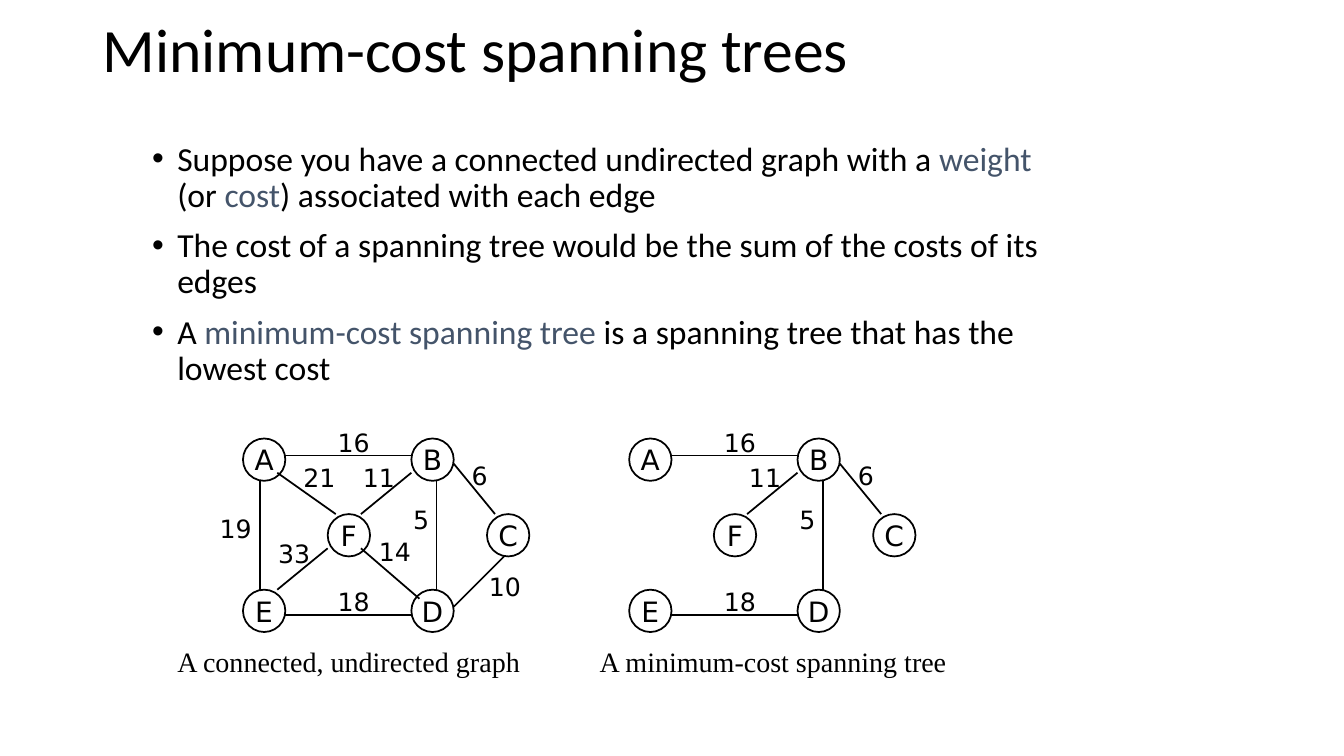
from lxml import etree
from pptx import Presentation
from pptx import util as u
from pptx.dml.color import RGBColor
from pptx.enum import shapes, text
from pptx.oxml.ns import qn

COLORS = {"ink": "000000", "term": "44546A"}

prs = Presentation()
prs.slide_width, prs.slide_height = u.Inches(13.33), u.Inches(7.5)
s = prs.slides.add_slide(prs.slide_layouts[6])


def add_run(p, words, font, size, color="ink"):
    r = p.add_run()
    r.text = words
    for name, value in {"name": font, "size": u.Pt(size)}.items():
        setattr(r.font, name, value)
    r.font.color.rgb = RGBColor.from_string(COLORS[color])


def add_box(parent, left, top, width, height, **frame):
    box = parent.shapes.add_textbox(*map(u.Inches, (left, top, width, height)))
    for name, value in {"word_wrap": True, **frame}.items():
        setattr(box.text_frame, name, value)
    return box.text_frame


# Title
tf = add_box(s, 0.92, 0.05, 11.5, 0.95, vertical_anchor=text.MSO_ANCHOR.MIDDLE)
tf.paragraphs[0].line_spacing = 0.9
add_run(tf.paragraphs[0], "Minimum-cost spanning trees", "Calibri", 44)

# Bulleted definitions
definitions = [
    [("Suppose you have a connected undirected graph with a ", "ink"),
     ("weight", "term"), (" (or ", "ink"), ("cost", "term"),
     (") associated with each edge", "ink")],
    [("The cost of a spanning tree would be the sum of the costs of its edges", "ink")],
    [("A ", "ink"), ("minimum-cost spanning tree", "term"),
     (" is a spanning tree that has the lowest cost", "ink")],
]
tf = add_box(s, 1.41, 1.36, 9.38, 2.73)
for i, runs in enumerate(definitions):
    p = tf.add_paragraph() if i else tf.paragraphs[0]
    pPr = p._p.get_or_add_pPr()
    pPr.set("marL", str(u.Inches(0.25)))
    pPr.set("indent", str(u.Inches(-0.25)))
    etree.SubElement(pPr, qn("a:buFont")).set("typeface", "Arial")
    etree.SubElement(pPr, qn("a:buChar")).set("char", "•")
    p.line_spacing = 0.9
    p.space_before = u.Pt(10 if i else 0)
    for words, color in runs:
        add_run(p, words, "Calibri", 24, color)

# Graph: node corners, then edges as line ends, weight and weight position
NODE = 0.42
nodes = {"A": (2.41, 4.35), "B": (4.08, 4.35), "E": (2.41, 5.85),
         "D": (4.08, 5.85), "F": (3.25, 5.1), "C": (4.83, 5.1)}
edges = {
    "AB": ((2.83, 4.52), (4.08, 4.52), "16", (3.25, 4.19)),
    "AE": ((2.58, 4.77), (2.58, 5.85), "19", (2.08, 5.04)),
    "BD": ((4.33, 4.77), (4.33, 5.85), "5", (4, 4.95)),
    "ED": ((2.83, 6.1), (4.08, 6.1), "18", (3.25, 5.77)),
    "EF": ((2.75, 5.85), (3.25, 5.44), "33", (2.66, 5.29)),
    "DF": ((4.16, 5.94), (3.58, 5.44), "14", (3.66, 5.27)),
    "AF": ((2.75, 4.69), (3.33, 5.1), "21", (2.91, 4.54)),
    "BF": ((4.08, 4.69), (3.58, 5.1), "11", (3.5, 4.54)),
    "DC": ((4.5, 6.02), (5, 5.52), "10", (4.75, 5.62)),
    "BC": ((4.5, 4.6), (4.91, 5.1), "6", (4.58, 4.52)),
}

# The full graph, and the same graph shifted with only the tree's edges
TREE_SHIFT = 3.83
diagrams = [
    (0, list(edges), "A connected, undirected graph", 1.66, 3.75, True),
    (TREE_SHIFT, ["AB", "BD", "ED", "BF", "BC"],
     "A minimum-cost spanning tree", 5.85, 3.64, False),
]
for shift, shown, caption, caption_left, caption_width, wrap in diagrams:
    group = s.shapes.add_group_shape()

    # Nodes
    for letter, (x, y) in nodes.items():
        sp = group.shapes.add_shape(
            shapes.MSO_SHAPE.OVAL, *map(u.Inches, (x + shift, y, NODE, NODE)))
        sp.shadow.inherit = False
        sp.fill.background()
        sp.line.color.rgb = RGBColor.from_string(COLORS["ink"])
        sp.line.width = u.Pt(1.25)
        tf = sp.text_frame
        tf.word_wrap = False
        tf.vertical_anchor = text.MSO_ANCHOR.MIDDLE
        tf.paragraphs[0].alignment = text.PP_ALIGN.CENTER
        add_run(tf.paragraphs[0], letter, "DejaVu Sans", 20)

    # Edges and weights
    for name in shown:
        (x1, y1), (x2, y2), weight, (x, y) = edges[name]
        line = group.shapes.add_connector(
            shapes.MSO_CONNECTOR.STRAIGHT,
            *map(u.Inches, (x1 + shift, y1, x2 + shift, y2)))
        line.line.color.rgb = RGBColor.from_string(COLORS["ink"])
        line.line.width = u.Pt(1.25)
        etree.SubElement(line._element.spPr, qn("a:effectLst"))
        tf = add_box(group, x + shift, y, 0.58, 0.4)
        add_run(tf.paragraphs[0], weight, "DejaVu Sans", 18)

    # Caption
    tf = add_box(group, caption_left, 6.34, caption_width, 0.43, word_wrap=wrap)
    add_run(tf.paragraphs[0], caption, "Times New Roman", 20)

prs.save("out.pptx")
